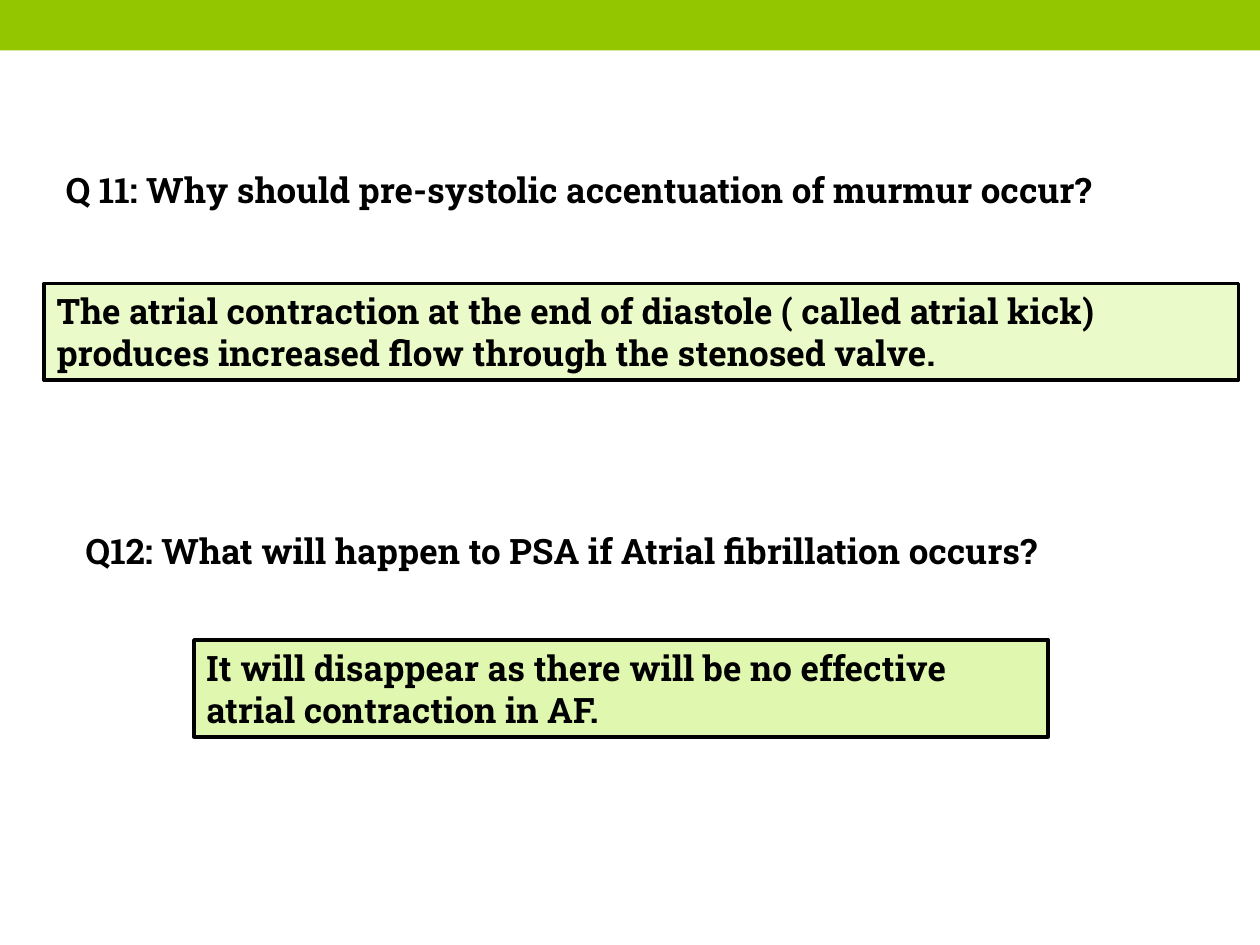
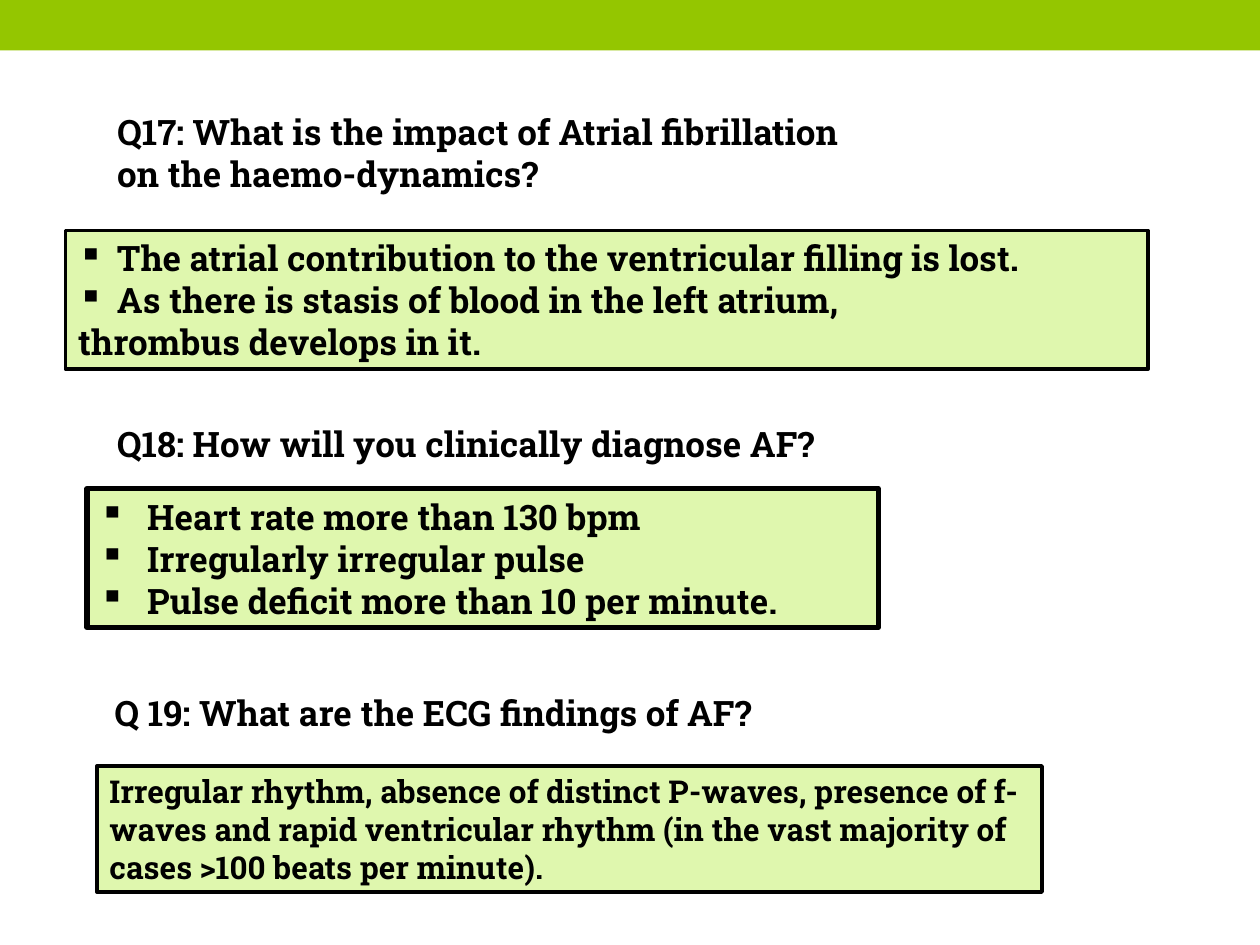
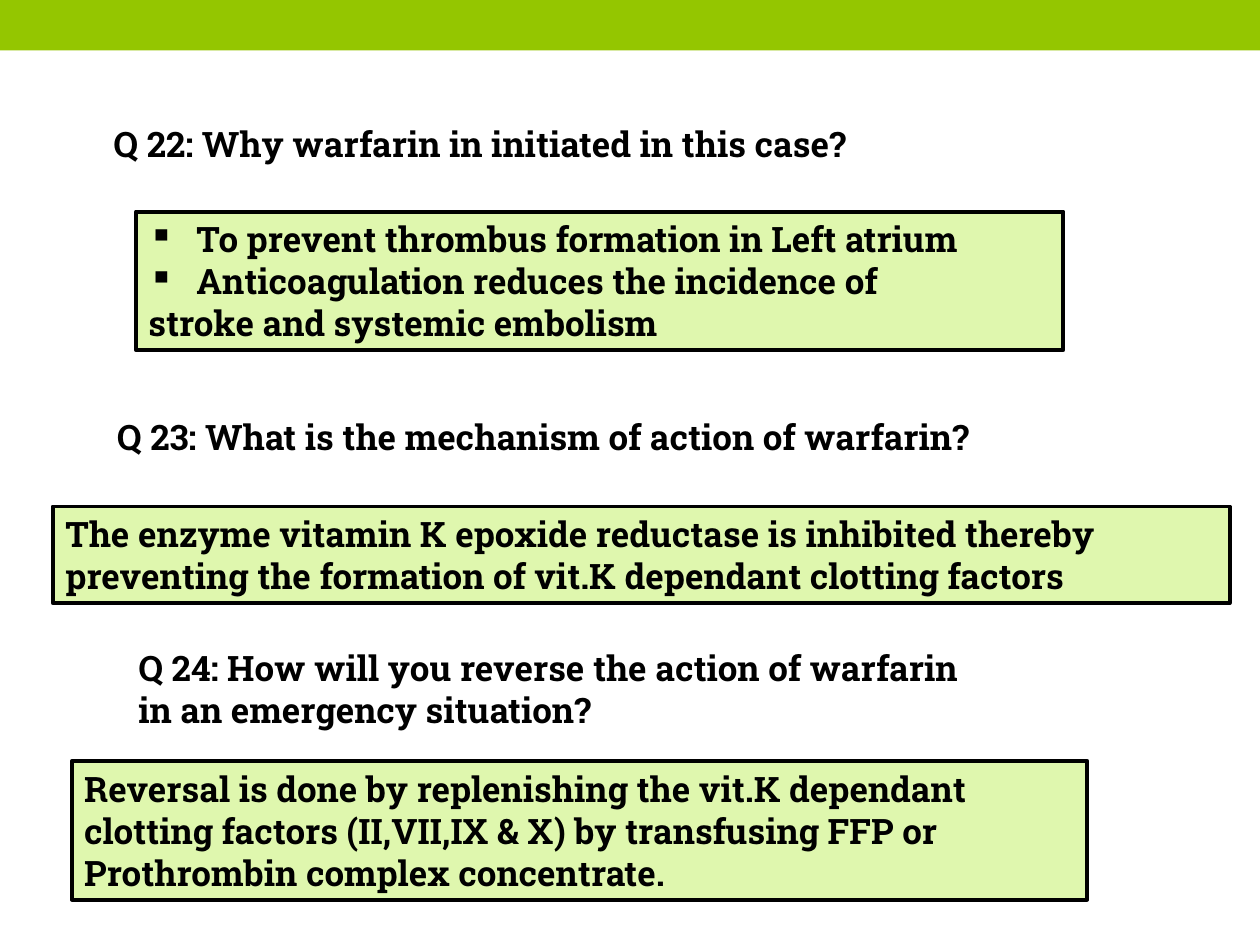
"""Build three question-and-answer slides on atrial fibrillation and warfarin."""
from pptx import Presentation
from pptx.dml.color import RGBColor
from pptx.enum.shapes import MSO_SHAPE
from pptx.enum.text import MSO_ANCHOR, MSO_AUTO_SIZE, PP_ALIGN
from pptx.oxml.ns import qn
from pptx.util import Inches, Pt
from lxml.etree import SubElement

FONT = "Roboto Slab"
BLACK = "000000"
BAND_GREEN = "94C600"
ANSWER_GREEN = "DFF7AE"
PALE_GREEN = "EAFAC9"
TEXT_SIZE = 20


def color(hex_string):
    """Return the colour for a hex string."""
    return RGBColor.from_string(hex_string)


def fill_shape(shape, fill):
    """Give a shape a flat fill without shadow."""
    shape.shadow.inherit = False
    shape.fill.solid()
    shape.fill.fore_color.rgb = color(fill)


def text_height(rows, size=TEXT_SIZE):
    """Return the height in inches of a box that holds the rows of text."""
    return 0.1 + rows * size / 60


def write_lines(shape, lines, size=TEXT_SIZE):
    """Write each line as a bold, left-aligned paragraph."""
    frame = shape.text_frame
    frame.text = "\n".join(lines)
    frame.word_wrap = True
    frame.auto_size = MSO_AUTO_SIZE.NONE
    frame.vertical_anchor = MSO_ANCHOR.TOP
    for para in frame.paragraphs:
        para.alignment = PP_ALIGN.LEFT
        for span in para.runs:
            span.font.name = FONT
            span.font.size = Pt(size)
            span.font.bold = True
            span.font.color.rgb = color(BLACK)


def add_bullet(para, indent):
    """Give a paragraph a square bullet with a hanging indent."""
    properties = para._p.get_or_add_pPr()
    properties.set("marL", str(Inches(indent)))
    properties.set("indent", str(-Inches(indent)))
    SubElement(properties, qn("a:buChar")).set("char", "▪")


def add_title(page, left, top, width, *lines):
    """Place the first question of a page in its title placeholder."""
    title = page.shapes.title
    title.left, title.top = Inches(left), Inches(top)
    title.width, title.height = Inches(width), Inches(text_height(len(lines)))
    write_lines(title, lines)


def add_question(page, left, top, width, *lines):
    """Add a further question as a text box."""
    box = page.shapes.add_textbox(Inches(left), Inches(top), Inches(width),
                                  Inches(text_height(len(lines))))
    write_lines(box, lines)


def add_answer(page, left, top, width, *lines, rows=None, size=TEXT_SIZE,
               fill=ANSWER_GREEN, border=2.25, bullets=0, indent=0.38):
    """Add an outlined answer box whose first paragraphs may be bulleted."""
    height = text_height(rows or len(lines), size)
    box = page.shapes.add_shape(MSO_SHAPE.RECTANGLE, Inches(left), Inches(top),
                                Inches(width), Inches(height))
    fill_shape(box, fill)
    box.line.color.rgb = color(BLACK)
    box.line.width = Pt(border)
    write_lines(box, lines, size)
    for para in box.text_frame.paragraphs[:bullets]:
        add_bullet(para, indent)


def add_layout_band(deck, layout, page):
    """Draw the top band and move it to the layout that all pages share."""
    band = page.shapes.add_shape(MSO_SHAPE.RECTANGLE, 0, 0,
                                 deck.slide_width, Inches(0.4))
    fill_shape(band, BAND_GREEN)
    band.line.fill.background()
    layout.shapes.element.append(band.element)


def build_murmur_page(page):
    """Fill the page on pre-systolic accentuation."""
    add_title(page, 0.42, 1.29, 9.34,
              "Q 11: Why should pre-systolic accentuation of murmur occur?")
    add_question(page, 0.58, 4.15, 8.68,
                 "Q12: What will happen to PSA if Atrial fibrillation occurs?")
    add_answer(page, 0.35, 2.25, 9.48,
               "The atrial contraction at the end of diastole ( called atrial kick)",
               "produces increased flow through the stenosed valve.",
               fill=PALE_GREEN)
    add_answer(page, 1.54, 5.08, 6.78,
               "It will disappear as there will be no effective",
               "atrial contraction in AF.")


def build_fibrillation_page(page):
    """Fill the page on the impact and diagnosis of atrial fibrillation."""
    add_title(page, 0.83, 0.83, 6.8,
              "Q17: What is the impact of Atrial fibrillation",
              "on the haemo-dynamics?")
    add_question(page, 0.83, 3.3, 6.34,
                 "Q18: How will you clinically diagnose AF?")
    add_question(page, 0.81, 5.44, 6,
                 "Q 19: What are the ECG findings of AF?")
    add_answer(page, 0.52, 1.83, 8.59,
               "The atrial contribution to the ventricular filling is lost.",
               "As there is stasis of blood in the left atrium,",
               "thrombus develops in it.", bullets=2, indent=0.31)
    add_answer(page, 0.69, 3.88, 6.28,
               "Heart rate more than 130 bpm",
               "Irregularly irregular pulse",
               "Pulse deficit more than 10 per minute.", bullets=3, border=3)
    add_answer(page, 0.77, 6.08, 7.5,
               "Irregular rhythm, absence of distinct P-waves, presence of "
               "f-waves and rapid ventricular rhythm (in the vast majority of "
               "cases >100 beats per minute).", rows=3, size=18)


def build_warfarin_page(page):
    """Fill the page on warfarin."""
    add_title(page, 0.8, 0.92, 6.82,
              "Q 22: Why warfarin in initiated in this case?")
    add_question(page, 0.83, 3.25, 7.78,
                 "Q 23: What is the mechanism of action of warfarin?")
    add_question(page, 1, 5.08, 7.47,
                 "Q 24: How will you reverse the action of warfarin",
                 "in an emergency situation?")
    add_answer(page, 1.08, 1.68, 7.36,
               "To prevent thrombus formation in Left atrium",
               "Anticoagulation reduces the incidence of",
               "stroke and systemic embolism", bullets=2)
    add_answer(page, 0.42, 4.02, 9.34,
               "The enzyme vitamin K epoxide reductase is inhibited thereby",
               "preventing the formation of vit.K dependant clotting factors")
    add_answer(page, 0.57, 6.04, 8.06,
               "Reversal is done by replenishing the vit.K dependant",
               "clotting factors (II,VII,IX & X) by transfusing FFP or",
               "Prothrombin complex concentrate.")


def main():
    """Build and save the deck."""
    deck = Presentation()
    deck.slide_width, deck.slide_height = Inches(10), Inches(7.5)
    layout = deck.slide_layouts.get_by_name("Title Only")
    builders = (build_murmur_page, build_fibrillation_page, build_warfarin_page)
    for build_page in builders:
        build_page(deck.slides.add_slide(layout))
    add_layout_band(deck, layout, deck.slides[0])
    deck.save("out.pptx")


if __name__ == "__main__":
    main()
